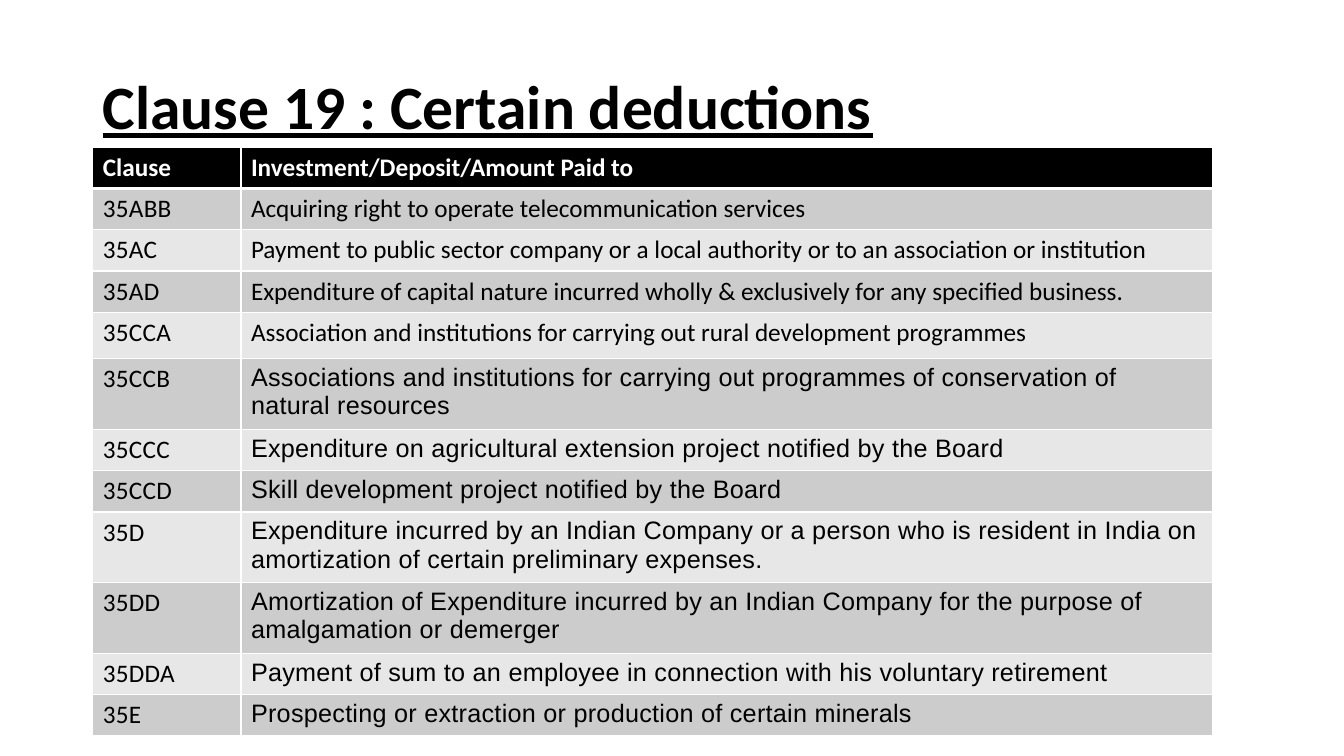
from dataclasses import dataclass

from lxml import etree
from pptx import Presentation
from pptx import util as u
from pptx.dml.color import RGBColor
from pptx.enum import text
from pptx.oxml import ns

EMU_PER_PX = 9144  # 100 px to the inch
BLACK, WHITE = "000000", "FFFFFF"
BANDS = ("CCCCCC", "E7E7E7")
COLUMN_WIDTHS = (147, 964)
TRACKING = 20  # hundredths of a point


@dataclass
class Deduction:
    clause: str
    purpose: str
    font: str = "Arial"
    height: int = 41


DEDUCTIONS = [
    Deduction("35ABB", "Acquiring right to operate telecommunication services", "Calibri"),
    Deduction("35AC", "Payment to public sector company or a local authority or to an "
              "association or institution", "Calibri"),
    Deduction("35AD", "Expenditure of capital nature incurred wholly & exclusively for any "
              "specified business.", "Calibri"),
    Deduction("35CCA", "Association and institutions for carrying out rural development "
              "programmes", "Calibri", 46),
    Deduction("35CCB", "Associations and institutions for carrying out programmes of "
              "conservation of natural resources", height=65),
    Deduction("35CCC", "Expenditure on agricultural extension project notified by the Board"),
    Deduction("35CCD", "Skill development project notified by the Board"),
    Deduction("35D", "Expenditure incurred by an Indian Company or a person who is resident "
              "in India on\namortization of certain preliminary expenses.", height=65),
    Deduction("35DD", "Amortization of Expenditure incurred by an Indian Company for the "
              "purpose of amalgamation or demerger", height=65),
    Deduction("35DDA", "Payment of sum to an employee in connection with his voluntary "
              "retirement"),
    Deduction("35E", "Prospecting or extraction or production of certain minerals"),
]


def px(n: int) -> u.Emu:
    return u.Emu(n * EMU_PER_PX)


def rgb(color: str) -> RGBColor:
    return RGBColor.from_string(color)


def format_runs(tf, font: str, size: int, color: str, bold: bool = False,
                underline: bool = False, tracking: int = 0) -> None:
    for p in tf.paragraphs:
        for r in p.runs:
            r.font.name = font
            r.font.size = u.Pt(size)
            r.font.bold = bold
            r.font.underline = underline
            r.font.color.rgb = rgb(color)
            if tracking:
                r.font._element.set("spc", str(tracking))


def set_borders(cell, top: int = 1, bottom: int = 1) -> None:
    """Draw white borders; widths are in points."""
    tc_pr = cell._tc.get_or_add_tcPr()
    widths = {"lnL": 1, "lnR": 1, "lnT": top, "lnB": bottom}
    for i, (side, width) in enumerate(widths.items()):
        ln = etree.Element(ns.qn(f"a:{side}"), w=str(u.Pt(width)))
        fill = etree.SubElement(ln, ns.qn("a:solidFill"))
        etree.SubElement(fill, ns.qn("a:srgbClr"), val=WHITE)
        tc_pr.insert(i, ln)


def fill_cell(cell, content: str, fill: str, font: str = "Calibri", color: str = BLACK,
              bold: bool = False, tracking: int = 0) -> None:
    cell.text_frame.text = content
    format_runs(cell.text_frame, font, 18, color, bold, tracking=tracking)
    cell.fill.solid()
    cell.fill.fore_color.rgb = rgb(fill)


def add_title(s) -> None:
    tf = s.shapes.add_textbox(px(92), px(36), px(1150), px(145)).text_frame
    tf.word_wrap = True
    tf.vertical_anchor = text.MSO_ANCHOR.MIDDLE
    tf.text = "Clause 19 : Certain deductions"
    tf.paragraphs[0].line_spacing = 0.9
    format_runs(tf, "Calibri", 44, BLACK, bold=True, underline=True)


def add_deductions(s) -> None:
    heights = [41] + [d.height for d in DEDUCTIONS]
    table = s.shapes.add_table(len(heights), len(COLUMN_WIDTHS), px(92), px(146),
                               px(sum(COLUMN_WIDTHS)), px(sum(heights))).table
    table.first_row = table.horz_banding = False
    for column, width in zip(table.columns, COLUMN_WIDTHS):
        column.width = px(width)
    for row, height in zip(table.rows, heights):
        row.height = px(height)

    for cell, heading in zip(table.rows[0].cells, ("Clause", "Investment/Deposit/Amount Paid to")):
        fill_cell(cell, heading, BLACK, color=WHITE, bold=True)
        set_borders(cell, bottom=3)
    for i, d in enumerate(DEDUCTIONS):
        band = BANDS[i % 2]
        clause, purpose = table.rows[i + 1].cells
        fill_cell(clause, d.clause, band, tracking=TRACKING)
        fill_cell(purpose, d.purpose, band, d.font,
                  tracking=TRACKING if d.font == "Arial" else 0)
        for cell in (clause, purpose):
            set_borders(cell, top=3 if i == 0 else 1)


def main() -> None:
    prs = Presentation()
    prs.slide_width, prs.slide_height = px(1333), px(750)
    s = prs.slides.add_slide(prs.slide_layouts[6])
    add_title(s)
    add_deductions(s)
    prs.save("out.pptx")


if __name__ == "__main__":
    main()
